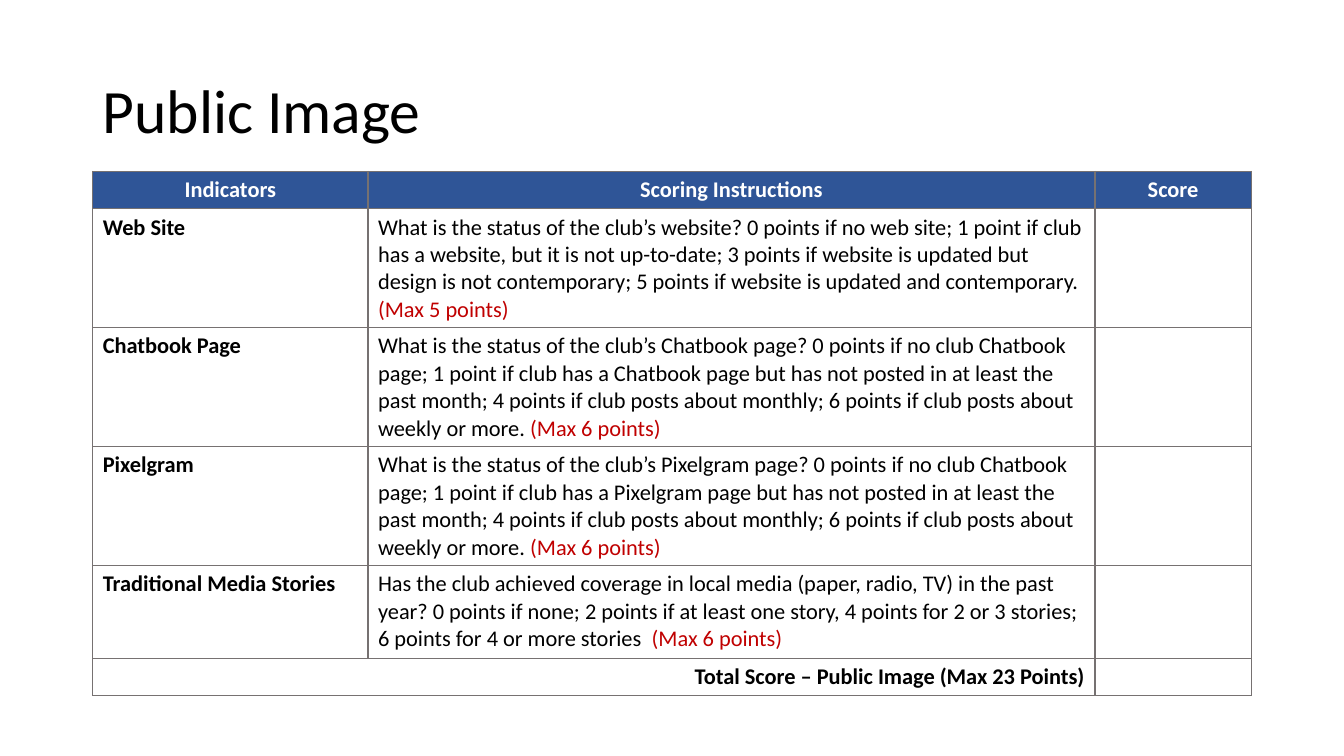
from dataclasses import dataclass

from lxml import etree
from pptx import Presentation
from pptx.dml.color import RGBColor
from pptx.enum.text import MSO_ANCHOR, PP_ALIGN
from pptx.oxml.ns import qn
from pptx.util import Inches, Pt

LEFT, CENTER, RIGHT = PP_ALIGN.LEFT, PP_ALIGN.CENTER, PP_ALIGN.RIGHT
MIDDLE = MSO_ANCHOR.MIDDLE

BLACK = RGBColor(0x00, 0x00, 0x00)
WHITE = RGBColor(0xFF, 0xFF, 0xFF)
HEADER_BLUE = RGBColor(0x2F, 0x55, 0x97)
MAX_RED = RGBColor(0xC0, 0x00, 0x00)
BORDER_GRAY = RGBColor(0x76, 0x71, 0x71)

FONT = "Calibri"
TABLE_SIZE = 16
COLUMN_WIDTHS = (2.73, 7.21, 1.55)
SINGLE_LINE_HEIGHT = 0.37
HEADERS = ("Indicators", "Scoring Instructions", "Score")
TOTAL = "Total Score – Public Image (Max 23 Points)"


@dataclass(frozen=True)
class Indicator:
    name: str
    instructions: str
    maximum: str
    height: float


def social_indicator(title: str, network: str) -> Indicator:
    return Indicator(
        title,
        f"What is the status of the club’s {network} page? 0 points if no club "
        f"Chatbook page; 1 point if club has a {network} page but has not posted "
        "in at least the past month; 4 points if club posts about monthly; "
        "6 points if club posts about weekly or more. ",
        "(Max 6 points)",
        1.18,
    )


INDICATORS = (
    Indicator(
        "Web Site",
        "What is the status of the club’s website? 0 points if no web site; "
        "1 point if club has a website, but it is not up-to-date; 3 points if "
        "website is updated but design is not contemporary; 5 points if website "
        "is updated and contemporary. ",
        "(Max 5 points)",
        1.18,
    ),
    social_indicator("Chatbook Page", "Chatbook"),
    social_indicator("Pixelgram", "Pixelgram"),
    Indicator(
        "Traditional Media Stories",
        "Has the club achieved coverage in local media (paper, radio, TV) in the "
        "past year? 0 points if none; 2 points if at least one story, 4 points "
        "for 2 or 3 stories; 6 points for 4 or more stories  ",
        "(Max 6 points)",
        0.92,
    ),
)


def add_text(para, text: str, *, size: float = TABLE_SIZE, color: RGBColor = BLACK,
             bold: bool = False, align: PP_ALIGN = LEFT) -> None:
    para.alignment = align
    span = para.add_run()
    span.text = text
    span.font.name = FONT
    span.font.size = Pt(size)
    span.font.bold = bold
    span.font.color.rgb = color


def add_title(page, text: str) -> None:
    box = page.shapes.add_textbox(Inches(0.92), Inches(0.4), Inches(11.5), Inches(1.45))
    frame = box.text_frame
    frame.word_wrap = True
    frame.vertical_anchor = MIDDLE
    para = frame.paragraphs[0]
    para.line_spacing = 0.9
    add_text(para, text, size=44)


def add_borders(cell) -> None:
    properties = cell._tc.get_or_add_tcPr()
    for side in ("a:lnL", "a:lnR", "a:lnT", "a:lnB"):
        line = etree.SubElement(properties, qn(side), w=str(Pt(1)))
        fill = etree.SubElement(line, qn("a:solidFill"))
        etree.SubElement(fill, qn("a:srgbClr"), val=str(BORDER_GRAY))


def set_empty_size(cell) -> None:
    para = cell.text_frame.paragraphs[0]
    etree.SubElement(para._p, qn("a:endParaRPr"), sz=str(TABLE_SIZE * 100))


def add_score_table(page) -> None:
    heights = [SINGLE_LINE_HEIGHT, *(item.height for item in INDICATORS), SINGLE_LINE_HEIGHT]
    frame = page.shapes.add_table(
        len(heights), len(COLUMN_WIDTHS), Inches(0.92), Inches(1.7),
        Inches(sum(COLUMN_WIDTHS)), Inches(sum(heights)),
    )
    table = frame.table
    table.first_row = False
    table.horz_banding = False
    for column, width in zip(table.columns, COLUMN_WIDTHS):
        column.width = Inches(width)
    for row, height in zip(table.rows, heights):
        row.height = Inches(height)
    for cell in table.iter_cells():
        add_borders(cell)
        cell.fill.background()

    for column, header in enumerate(HEADERS):
        cell = table.cell(0, column)
        cell.fill.solid()
        cell.fill.fore_color.rgb = HEADER_BLUE
        add_text(cell.text_frame.paragraphs[0], header, color=WHITE, bold=True, align=CENTER)

    for row, item in enumerate(INDICATORS, start=1):
        name, instructions, score = (table.cell(row, column) for column in range(3))
        add_text(name.text_frame.paragraphs[0], item.name, bold=True)
        para = instructions.text_frame.paragraphs[0]
        add_text(para, item.instructions)
        add_text(para, item.maximum, color=MAX_RED)
        set_empty_size(score)

    last = len(heights) - 1
    total = table.cell(last, 0)
    total.merge(table.cell(last, 1))
    add_text(total.text_frame.paragraphs[0], TOTAL, bold=True, align=RIGHT)
    set_empty_size(table.cell(last, 1))
    set_empty_size(table.cell(last, 2))


def main() -> None:
    deck = Presentation()
    deck.slide_width = Inches(13.33)
    deck.slide_height = Inches(7.5)
    page = deck.slides.add_slide(deck.slide_layouts[6])
    add_title(page, "Public Image")
    add_score_table(page)
    deck.save("out.pptx")


if __name__ == "__main__":
    main()
